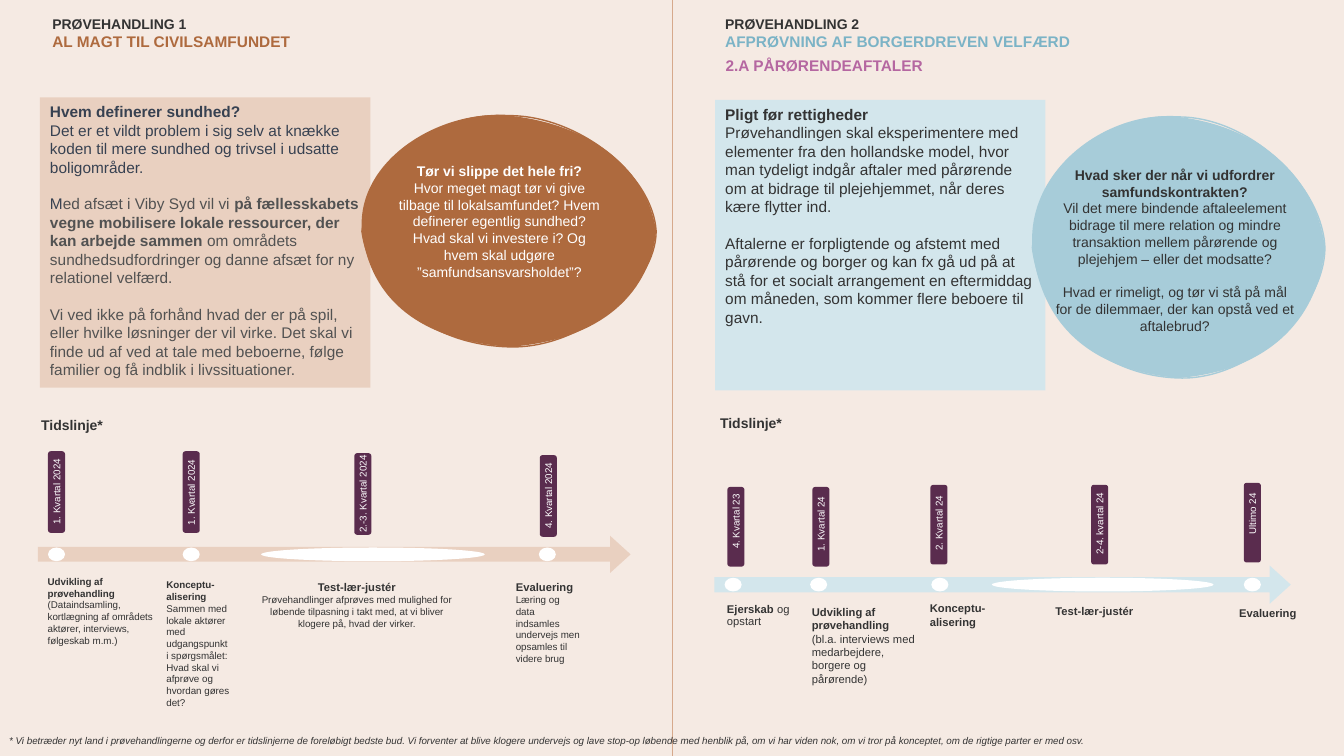
from copy import deepcopy
from pptx import Presentation
from pptx.dml.color import RGBColor
from pptx.enum.shapes import MSO_CONNECTOR, MSO_SHAPE
from pptx.enum.text import MSO_ANCHOR, MSO_AUTO_SIZE, PP_ALIGN
from pptx.oxml.ns import qn
from pptx.util import Pt
from lxml.etree import SubElement

INK, PLUM, WHITE = "333333", "5A2C4E", "FFFFFF"
SLATE, GREY = "374151", "525252"
LEFT, MID, RIGHT = PP_ALIGN.LEFT, PP_ALIGN.CENTER, PP_ALIGN.RIGHT
RIM = [(0, .5), (.03, .26), (.21, -.02), (.5, 0), (.74, 0), (.99, .26), (1, .5),
       (1, .73), (.75, 1.01), (.5, 1), (.22, .99), (.03, .76), (0, .5)]
BLOB = [(0, .5), (-.02, .19), (.27, -.03), (.5, 0), (.79, .04), (.97, .24), (1, .5),
        (.98, .75), (.83, .97), (.5, 1), (.2, .97), (.03, .8), (0, .5)]


def color(code):
    return RGBColor.from_string(code)


def run(text, size, bold=False, hue=INK):
    return text, size, bold, hue


def head(text, size, hue=INK):
    return [run(text, size, True, hue)]


def plain(text, size, hue=INK):
    return [run(text, size, False, hue)]


def place(shape, box):
    shape.left, shape.top, shape.width, shape.height = [Pt(n) for n in box]


def write(shape, paras, align=LEFT, gaps=(), pitch=None, slant=False):
    frame = shape.text_frame
    frame.word_wrap = True
    frame.auto_size = MSO_AUTO_SIZE.NONE
    frame.vertical_anchor = MSO_ANCHOR.TOP
    frame.text = "\n".join(runs[0][0] for runs in paras)
    for row, (para, runs) in enumerate(zip(frame.paragraphs, paras)):
        if shape.is_placeholder:
            props = para._p.get_or_add_pPr()
            props.set("marL", "0")
            props.set("indent", "0")
            SubElement(props, qn("a:buNone"))
        para.alignment = align
        para.space_before = Pt(runs[0][1] * 1.17 if row in gaps else 0)
        if pitch:
            para.line_spacing = pitch
        for part in runs[1:]:
            para.add_run().text = part[0]
        for item, (text, size, bold, hue) in zip(para.runs, runs):
            item.font.name = "Arial"
            item.font.size = Pt(size)
            item.font.bold = bold
            item.font.italic = slant
            item.font.color.rgb = color(hue)


def label(slide, box, paras, align=LEFT, **more):
    shape = slide.shapes.add_textbox(*[Pt(n) for n in box])
    write(shape, paras, align, **more)
    return shape


def block(slide, kind, box, hue):
    shape = slide.shapes.add_shape(kind, *[Pt(n) for n in box])
    shape.shadow.inherit = False
    shape.fill.solid()
    shape.fill.fore_color.rgb = color(hue)
    shape.line.fill.background()
    return shape


def bend(track, knots, wide, high):
    for at, line in enumerate(track.findall(qn("a:lnTo"))):
        line.tag = qn("a:cubicBezTo")
        line.remove(line[0])
        for x, y in knots[at * 3 + 1:at * 3 + 4]:
            SubElement(line, qn("a:pt"), x=str(Pt(x * wide)), y=str(Pt(y * high)))


def bubble(slide, box, hue, area, paras, gaps=()):
    left, top, wide, high = box
    dots = [(Pt(left + x * wide), Pt(top + y * high)) for x, y in RIM[::3]]
    maker = slide.shapes.build_freeform(*dots[0])
    maker.add_line_segments(dots[1:], close=True)
    shape = maker.convert_to_shape()
    rim = shape._element.spPr.find(".//" + qn("a:path"))
    blob = deepcopy(rim)
    rim.addnext(blob)
    rim.set("fill", "none")
    blob.set("stroke", "0")
    bend(rim, RIM, wide, high)
    bend(blob, BLOB, wide, high)
    shape.shadow.inherit = False
    shape.fill.solid()
    shape.fill.fore_color.rgb = color(hue)
    shape.line.color.rgb = color(hue)
    shape.line.width = Pt(1)
    label(slide, area, paras, MID, gaps=gaps)


def story(holder, box, hue, paras, gaps):
    place(holder, box)
    holder.fill.solid()
    holder.fill.fore_color.rgb = color(hue)
    write(holder, paras, gaps=gaps)


def timeline(slide, box, hue, tall, steps):
    left, top, wide, high = box
    arrow = block(slide, MSO_SHAPE.RIGHT_ARROW, box, hue)
    arrow.adjustments[0], arrow.adjustments[1] = .397, .551
    mid = top + high / 2
    for when, tag, dot, note, paras, align in steps:
        x, up, span, drop = tag
        x, up, drop = left + x, top - up, top - drop
        block(slide, MSO_SHAPE.FLOWCHART_ALTERNATE_PROCESS, (x - 6.1, up, 12.2, tall), PLUM)
        sign = label(slide, (x - span / 2, drop - 7.9, span, 15.8),
                     [plain(when, 7, WHITE)], RIGHT)
        sign.rotation = 270
        spot, size = dot
        block(slide, MSO_SHAPE.OVAL, (left + spot - size / 2, mid - 4.9, size, 9.8), WHITE)
        shift, down, broad, deep = note
        label(slide, (left + shift, top + down, broad, deep), paras, align,
              pitch=.9 if len(paras[0]) > 1 else None)


def first(slide, box, holder):
    x, y, wide, high = box
    place(slide.shapes.title, (x + 30.2, y + 7.2, 202, 32.4))
    write(slide.shapes.title, [head("PRØVEHANDLING 1", 10),
                               head("AL MAGT TIL CIVILSAMFUNDET", 11, "AE6A3E")])
    story(holder, (x + 28.5, y + 69.5, 236, 207.4), "E9D0C0", [
        head("Hvem definerer sundhed?", 11, SLATE),
        plain("Det er et vildt problem i sig selv at knække koden til mere sundhed og trivsel i udsatte boligområder.", 11, SLATE),
        [run("M", 11, False, SLATE), run("ed afsæt i Viby Syd vil vi ", 11, False, GREY),
         run("på fællesskabets vegne mobilisere lokale ressourcer, der kan arbejde sammen", 11, True, GREY),
         run(" om områdets sundhedsudfordringer og danne afsæt for ny relationel velfærd.", 11, False, GREY)],
        plain("Vi ved ikke på forhånd hvad der er på spil, eller hvilke løsninger der vil virke. Det skal vi finde ud af ved at tale med beboerne, følge familier og få indblik i livssituationer.", 11, GREY)],
        (2, 3))
    bubble(slide, (x + 258.5, y + 82.6, 210.2, 165.2), "AE6A3E", (x + 277.5, y + 112.5, 158.4, 92.2), [
        head("Tør vi slippe det hele fri?", 10, WHITE),
        plain("Hvor meget magt tør vi give tilbage til lokalsamfundet? Hvem definerer egentlig sundhed? Hvad skal vi investere i? Og hvem skal udgøre ”samfundsansvarsholdet”?", 10, WHITE)])
    label(slide, (x + 22.3, y + 295.2, 439, 24), [head("Tidslinje*", 10)], pitch=.9)
    timeline(slide, (x + 27, y + 382.7, 423.4, 26.6), "E9D0C0", 58.3, [
        ("1. Kvartal 2024", (13.4, 60.4, 63.4, 30.2), (13.4, 12.2), (0, 24.8, 93.6, 68),
         [head("Udvikling af prøvehandling", 7), plain("(Dataindsamling,", 7),
          plain("kortlægning af områdets aktører, interviews, følgeskab m.m.)", 7)], LEFT),
        ("1. Kvartal 2024", (109.6, 60.4, 69.8, 26.6), (109.6, 12.2), (84.8, 27.4, 59.8, 117),
         [head("Konceptu-alisering", 7),
          plain("Sammen med lokale aktører med udgangspunkt i spørgsmålet: Hvad skal vi afprøve og hvordan gøres det?", 7)], LEFT),
        ("2.-3. Kvartal 2024", (232.2, 59, 75.6, 26.6), (239.4, 159.8), (152.3, 28.3, 151.2, 54),
         [head("Test-lær-justér", 8),
          plain("Prøvehandlinger afprøves med mulighed for løbende tilpasning i takt med, at vi bliver klogere på, hvad der virker.", 7)], MID),
        ("4. Kvartal 2024", (364.7, 57.6, 64.8, 26.6), (364, 12.2), (334.4, 28.3, 60.5, 88.6),
         [head("Evaluering", 8),
          plain("Læring og data indsamles undervejs men opsamles til videre brug", 7)], LEFT)])


def second(slide, box, holder):
    x, y, wide, high = box
    label(slide, (x + 30.9, y + 7.2, 435.6, 32.4), [
        head("PRØVEHANDLING 2", 10), head("AFPRØVNING AF BORGERDREVEN VELFÆRD", 11, "7BB3C6")])
    label(slide, (x + .2, y + 36.4, 217.4, 21), [head("2.A PÅRØRENDEAFTALER", 11, "B567A1")], MID)
    story(holder, (x + 30.8, y + 71.4, 236, 207.4), "D3E6EC", [
        head("Pligt før rettigheder", 11),
        plain("Prøvehandlingen skal eksperimentere med elementer fra den hollandske model, hvor man tydeligt indgår aftaler med pårørende om at bidrage til plejehjemmet, når deres kære flytter ind.", 11),
        plain("Aftalerne er forpligtende og afstemt med pårørende og borger og kan fx gå ud på at stå for et socialt arrangement en eftermiddag om måneden, som kommer flere beboere til gavn.", 11)],
        (2,))
    bubble(slide, (x + 257.4, y + 83.5, 209, 186.5), "A7CCD9", (x + 267, y + 115.2, 184.3, 128.2), [
        head("Hvad sker der når vi udfordrer samfundskontrakten?", 10),
        plain("Vil det mere bindende aftaleelement bidrage til mere relation og mindre transaktion mellem pårørende og plejehjem – eller det modsatte?", 10),
        plain("Hvad er rimeligt, og tør vi stå på mål for de dilemmaer, der kan opstå ved et aftalebrud?", 10)], (2,))
    label(slide, (x + 27.3, y + 293.8, 439, 24), [head("Tidslinje*", 10)], pitch=.9)
    timeline(slide, (x + 30.2, y + 403.9, 411.8, 27.4), "D3E6EC", 56.9, [
        ("4. Kvartal 23", (15.5, 56.1, 64.1, 25.9), (13.5, 12.2), (2, 23.8, 62, 64),
         [[run("Ejerskab", 8, True), run(" og opstart", 8)]], LEFT),
        ("1. Kvartal 24", (76.2, 56.1, 54.7, 28.8), (74.6, 12.2), (62.6, 24.8, 92.2, 75),
         [head("Udvikling af prøvehandling", 8),
          plain("(bl.a. interviews med medarbejdere, borgere og pårørende)", 8)], LEFT),
        ("2. Kvartal 24", (160.5, 57.6, 59, 27.4), (161.2, 12.2), (146.9, 22.3, 61.2, 27),
         [head("Konceptu-alisering", 8)], LEFT),
        ("2-4. kvartal 24", (275.3, 57.6, 64.8, 26.6), (277.5, 158.4), (196.6, 24.5, 149.8, 36),
         [head("Test-lær-justér", 8)], MID),
        ("Ultimo 24", (384.4, 59, 56.9, 30.2), (384.4, 12.2), (367.8, 25.9, 59.8, 36),
         [head("Evaluering", 8)], LEFT)])


def main():
    deck = Presentation()
    deck.slide_width, deck.slide_height = Pt(960), Pt(540)
    slide = deck.slides.add_slide(deck.slide_layouts[3])
    slide.background.fill.solid()
    slide.background.fill.fore_color.rgb = color("F5EAE3")
    first(slide, (0, 0, 480, 540), slide.placeholders[1])
    second(slide, (480, 0, 480, 540), slide.placeholders[2])
    split = slide.shapes.add_connector(MSO_CONNECTOR.STRAIGHT, Pt(480), 0, Pt(480), Pt(540))
    split.line.color.rgb = color("D6A98C")
    split.line.width = Pt(.5)
    SubElement(split._element.spPr, qn("a:effectLst"))
    label(slide, (-.5, 521.3, 792, 15.8), [
        plain("* Vi betræder nyt land i prøvehandlingerne og derfor er tidslinjerne de foreløbigt bedste bud. Vi forventer at blive klogere undervejs og lave stop-op løbende med henblik på, om vi har viden nok, om vi tror på konceptet, om de rigtige parter er med osv.", 7)],
        slant=True)
    deck.save("out.pptx")


if __name__ == "__main__":
    main()
